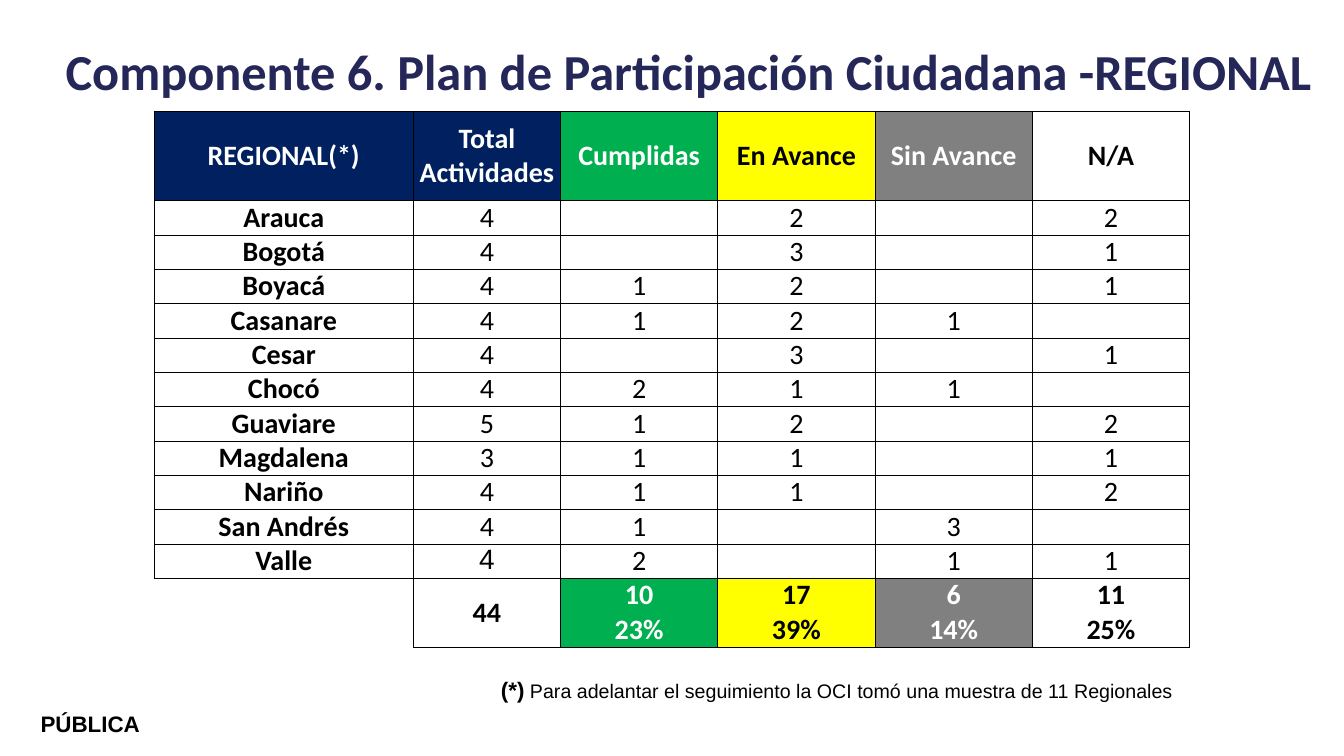
from dataclasses import dataclass

from lxml import etree
from pptx import Presentation
from pptx.dml.color import RGBColor
from pptx.enum.text import MSO_ANCHOR, MSO_AUTO_SIZE, PP_ALIGN
from pptx.oxml.ns import qn
from pptx.util import Inches, Pt

LEFT, CENTER = PP_ALIGN.LEFT, PP_ALIGN.CENTER
TOP, MIDDLE, BOTTOM = MSO_ANCHOR.TOP, MSO_ANCHOR.MIDDLE, MSO_ANCHOR.BOTTOM
NO_AUTOFIT = MSO_AUTO_SIZE.NONE
TITLE_ONLY = 5
PLAIN_TABLE = "{2D5ABB26-0587-4C30-8999-92F81FD0307C}"


@dataclass(frozen=True)
class Theme:
    title: str = "242758"
    navy: str = "002060"
    green: str = "00B050"
    yellow: str = "FFFF00"
    gray: str = "808080"
    white: str = "FFFFFF"
    black: str = "000000"
    sans: str = "Arial"
    main: str = "Calibri"
    title_size: int = 36
    table_size: int = 20
    label_size: int = 16
    note_size: int = 14
    border: float = 0.5


T = Theme()

# Table content
COL_WIDTHS = [2.57, 1.46] + [1.56] * 4
HEADER_HEIGHT, ROW_HEIGHT = 0.89, 0.34
HEADERS = ["REGIONAL(*)", "Total Actividades", "Cumplidas", "En Avance",
           "Sin Avance", "N/A"]
HEADER_FILLS = [T.navy, T.navy, T.green, T.yellow, T.gray, T.white]
REGIONS = [
    ["Arauca", "4", "", "2", "", "2"],
    ["Bogotá", "4", "", "3", "", "1"],
    ["Boyacá", "4", "1", "2", "", "1"],
    ["Casanare", "4", "1", "2", "1", ""],
    ["Cesar", "4", "", "3", "", "1"],
    ["Chocó", "4", "2", "1", "1", ""],
    ["Guaviare", "5", "1", "2", "", "2"],
    ["Magdalena", "3", "1", "1", "", "1"],
    ["Nariño", "4", "1", "1", "", "2"],
    ["San Andrés", "4", "1", "", "3", ""],
    ["Valle", "4", "2", "", "1", "1"],
]
TOTALS = [
    ["", "44", "10", "17", "6", "11"],
    ["", "", "23%", "39%", "14%", "25%"],
]


def add_run(p, text, color=T.black, **fmt):
    r = p.add_run()
    r.text = text
    r.font.color.rgb = RGBColor.from_string(color)
    for name, value in fmt.items():
        setattr(r.font, name, value)


def fill_text(sp, runs, align=LEFT):
    tf = sp.text_frame
    for name, value in dict(word_wrap=True, auto_size=NO_AUTOFIT,
                            vertical_anchor=TOP).items():
        setattr(tf, name, value)
    p = tf.paragraphs[0]
    p.alignment = align
    for text, fmt in runs:
        add_run(p, text, **fmt)


def set_borders(cell, sides):
    tcPr = cell._tc.get_or_add_tcPr()
    for i, side in enumerate("LRTB"):
        ln = etree.Element(qn(f"a:ln{side}"), w=str(Pt(T.border)))
        if side in sides:
            fill = etree.SubElement(ln, qn("a:solidFill"))
            etree.SubElement(fill, qn("a:srgbClr"), val=T.black)
        else:
            etree.SubElement(ln, qn("a:noFill"))
        tcPr.insert(i, ln)


def fill_cell(cell, text, fill=T.white, bold=False, font=T.main,
              anchor=MIDDLE, sides="LRTB"):
    side_margin = Inches(0.01)
    for name, value in dict(margin_left=side_margin, margin_right=side_margin,
                            margin_top=0, margin_bottom=0,
                            vertical_anchor=anchor).items():
        setattr(cell, name, value)
    cell.fill.solid()
    cell.fill.fore_color.rgb = RGBColor.from_string(fill)
    set_borders(cell, sides)
    if text:
        color = T.black if fill in (T.white, T.yellow) else T.white
        p = cell.text_frame.paragraphs[0]
        p.alignment = CENTER
        add_run(p, text, color, size=Pt(T.table_size), bold=bold, name=font)


def add_title(slide, left, top, width, height):
    sp = slide.shapes.title
    for name, value in dict(left=left, top=top, width=width,
                            height=height).items():
        setattr(sp, name, Inches(value))
    fill_text(sp, [("Componente 6. Plan de Participación Ciudadana -REGIONAL",
                    dict(color=T.title, size=Pt(T.title_size), bold=True,
                         name=T.main))])


def add_regional_table(slide, left, top):
    rows = [HEADERS] + REGIONS + TOTALS
    heights = [HEADER_HEIGHT] + [ROW_HEIGHT] * (len(rows) - 1)
    table = slide.shapes.add_table(
        len(rows), len(HEADERS), Inches(left), Inches(top),
        Inches(sum(COL_WIDTHS)), Inches(sum(heights))).table
    table.first_row = table.horz_banding = False
    table._tbl.tblPr.find(qn("a:tableStyleId")).text = PLAIN_TABLE
    for col, width in zip(table.columns, COL_WIDTHS):
        col.width = Inches(width)
    for row, height in zip(table.rows, heights):
        row.height = Inches(height)

    # Header
    for c, (text, fill) in enumerate(zip(HEADERS, HEADER_FILLS)):
        fill_cell(table.cell(0, c), text, fill, bold=True)

    # Regions
    for r, region in enumerate(REGIONS, 1):
        for c, text in enumerate(region):
            fmt = {}
            if region is REGIONS[-1] and c == 1:
                fmt = dict(font=T.sans, anchor=TOP)
            fill_cell(table.cell(r, c), text, bold=c == 0, **fmt)

    # Totals: counts above percentages, with one cell for the grand total
    first = len(REGIONS) + 1
    table.cell(first, 1).merge(table.cell(first + 1, 1))
    for r, (totals, edge) in enumerate(zip(TOTALS, "TB"), first):
        fill_cell(table.cell(r, 0), "", sides="RT" if edge == "T" else "R")
        fill_cell(table.cell(r, 1), totals[1], bold=True)
        for c in range(2, len(totals)):
            fill_cell(table.cell(r, c), totals[c], HEADER_FILLS[c], bold=True,
                      anchor=BOTTOM, sides="LR" + edge)


def add_label(slide, left, top, width, height, runs, align=LEFT):
    sp = slide.shapes.add_textbox(*map(Inches, (left, top, width, height)))
    fill_text(sp, runs, align)


def main():
    prs = Presentation()
    prs.slide_width, prs.slide_height = Inches(13.33), Inches(7.5)
    slide = prs.slides.add_slide(prs.slide_layouts[TITLE_ONLY])
    strong = dict(size=Pt(T.label_size), bold=True, name=T.sans)
    note = dict(size=Pt(T.note_size), bold=False, name=T.sans)

    add_label(slide, 0.19, 7, 1.41, 0.37, [("PÚBLICA", strong)], CENTER)
    add_title(slide, 0.55, 0.35, 12.59, 1.01)
    add_regional_table(slide, 1.53, 1.1)
    add_label(slide, 4.87, 6.66, 7.11, 0.37, [
        ("(*)", strong),
        (" Para adelantar el seguimiento la OCI tomó una muestra de "
         "11 Regionales", note)])
    prs.save("out.pptx")


if __name__ == "__main__":
    main()
